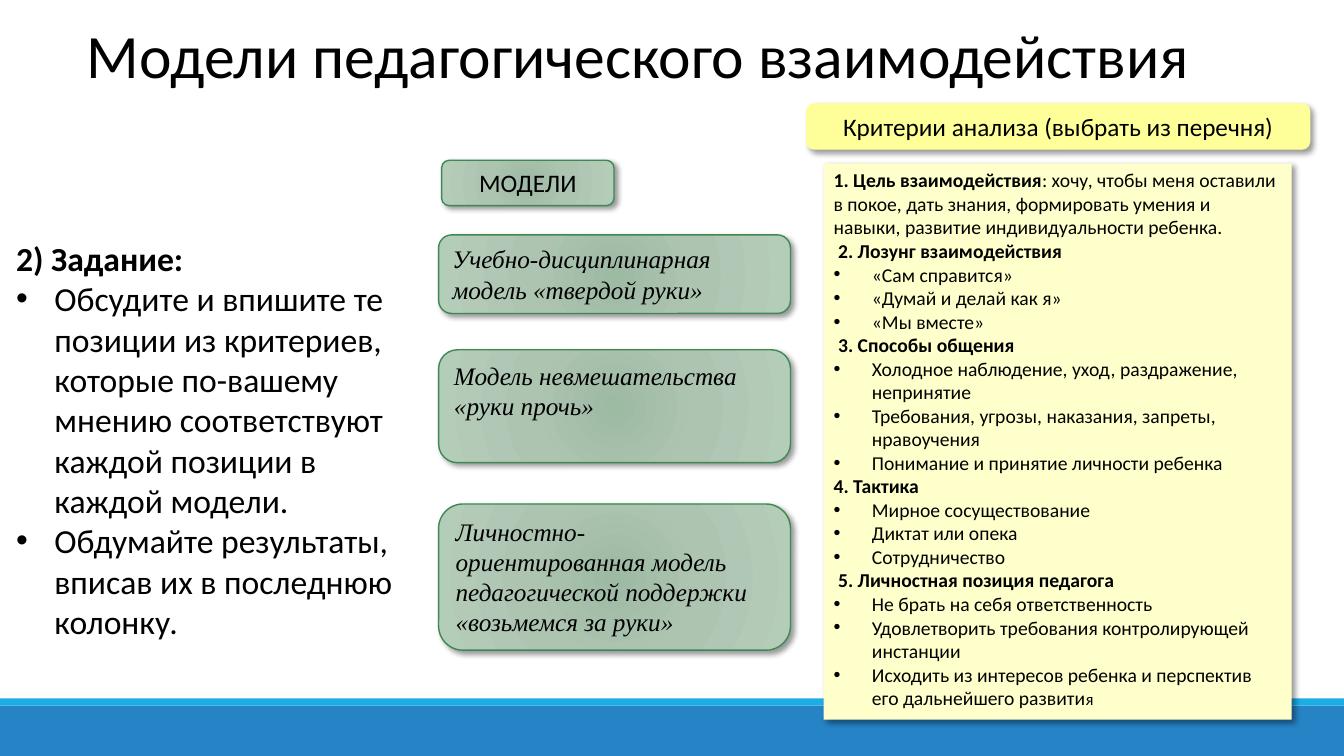
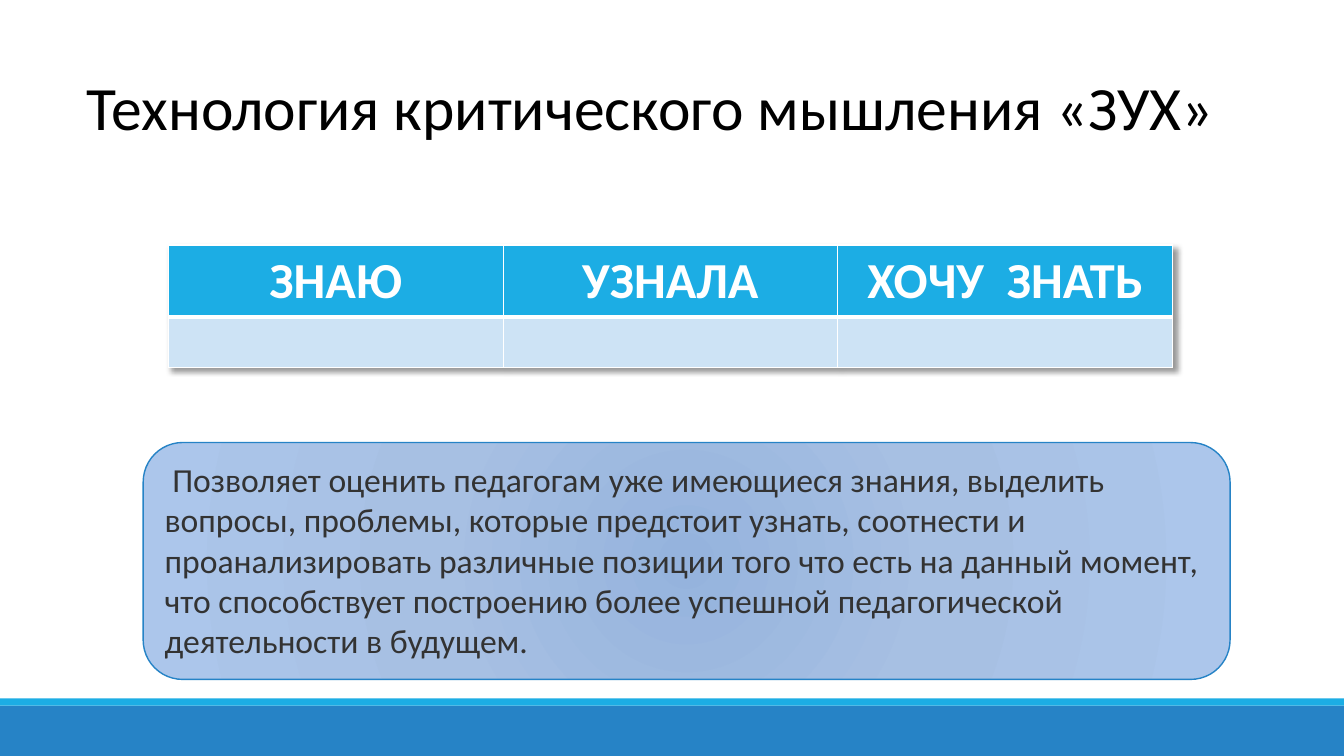
"""Builds two slides on models of teaching and a table for critical thinking."""
from lxml import etree
from pptx import Presentation
from pptx.dml.color import RGBColor
from pptx.enum.shapes import MSO_SHAPE
from pptx.enum.text import MSO_ANCHOR, MSO_AUTO_SIZE, PP_ALIGN
from pptx.oxml import parse_xml
from pptx.oxml.ns import nsdecls, qn
from pptx.util import Pt

RECT = MSO_SHAPE.RECTANGLE
ROUND = MSO_SHAPE.ROUNDED_RECTANGLE
LEFT = PP_ALIGN.LEFT
CENTER = PP_ALIGN.CENTER
TOP = MSO_ANCHOR.TOP
FIXED = MSO_AUTO_SIZE.NONE

BLACK = RGBColor(0x00, 0x00, 0x00)
WHITE = RGBColor(0xFF, 0xFF, 0xFF)
GRAY = RGBColor(0x33, 0x33, 0x33)
BLUE = RGBColor(0x26, 0x83, 0xC6)
CYAN = RGBColor(0x1C, 0xAD, 0xE4)
PALE = RGBColor(0xCD, 0xE3, 0xF5)
CREAM = RGBColor(0xFF, 0xFF, 0xCC)
YELLOW = RGBColor(0xFF, 0xFF, 0x99)
GREEN = RGBColor(0x3E, 0x88, 0x53)
MINT = (RGBColor(0x9D, 0xBA, 0xA3), RGBColor(0xAD, 0xC4, 0xB1), RGBColor(0xB4, 0xCD, 0xB9))
SKY = (RGBColor(0x95, 0xB3, 0xDD), RGBColor(0xA7, 0xC0, 0xE3), RGBColor(0xAC, 0xC6, 0xEB))

SANS = "Calibri"
SERIF = "Times New Roman"
PX = 9144
WIDE, HIGH = 1333, 750
INDENT = 38


def px(*sizes):
    """Turn px lengths into EMU."""
    return [size * PX for size in sizes]


def head(text, tail=""):
    """Give a plain line with a bold start."""
    return False, [(text, {"bold": True}), (tail, {})]


def dot(text, tail="", **form):
    """Give a bullet line whose tail may have its own format."""
    return True, [(text, {}), (tail, form)]


def put(frame, lines, size=18, font=SANS, ink=BLACK, bold=False,
        italic=False, align=LEFT, wrap=True):
    """Fill a text frame with one string or a list of head and dot lines."""
    if isinstance(lines, str):
        lines = [(False, [(lines, {})])]
    frame.word_wrap = wrap
    frame.auto_size = FIXED
    frame.vertical_anchor = TOP
    for rank, (point, runs) in enumerate(lines):
        para = frame.add_paragraph() if rank else frame.paragraphs[0]
        para.alignment = align
        para.space_before = Pt(0)
        prop = para._p.get_or_add_pPr()
        hang = INDENT * PX if point else 0
        prop.set("marL", str(hang))
        prop.set("indent", str(-hang))
        if point:
            etree.SubElement(prop, qn("a:buFont")).set("typeface", "Arial")
            etree.SubElement(prop, qn("a:buChar")).set("char", "•")
        else:
            etree.SubElement(prop, qn("a:buNone"))
        for text, form in runs:
            if text:
                run = para.add_run()
                run.text = text
                face = run.font
                face.name = font
                face.size = Pt(form.get("size", size))
                face.bold = form.get("bold", bold)
                face.italic = italic
                face.color.rgb = ink


def shade(host):
    """Add the soft drop shadow to an effect list."""
    host.append(parse_xml(
        f'<a:outerShdw {nsdecls("a")} blurRad="{Pt(4)}" dist="{Pt(3)}" dir="2700000" '
        'algn="tl" rotWithShape="0"><a:srgbClr val="000000">'
        '<a:alpha val="40000"/></a:srgbClr></a:outerShdw>'))


def glow(shape, tones):
    """Fill a shape with a round gradient of three tones."""
    stops = "".join(f'<a:gs pos="{spot}000"><a:srgbClr val="{tone}"/></a:gs>'
                    for spot, tone in zip((0, 45, 100), tones))
    shape.fill.background()
    props = shape.element.spPr
    props.replace(props.find(qn("a:noFill")), parse_xml(
        f'<a:gradFill {nsdecls("a")} rotWithShape="1"><a:gsLst>{stops}</a:gsLst>'
        '<a:path path="circle"><a:fillToRect l="100000" t="100000" r="100000" '
        'b="100000"/></a:path></a:gradFill>'))


def edge(cell, **sides):
    """Draw white cell borders with the given widths in points."""
    prop = cell._tc.get_or_add_tcPr()
    for rank, side in enumerate("LRTB"):
        prop.insert(rank, parse_xml(
            f'<a:ln{side} {nsdecls("a")} w="{Pt(sides.get(side, 1))}"><a:solidFill>'
            f'<a:srgbClr val="{WHITE}"/></a:solidFill></a:ln{side}>'))


class Deck:
    """Holds the shared style and the current slide."""

    def __init__(self):
        """Start an empty wide deck."""
        self.show = Presentation()
        self.show.slide_width, self.show.slide_height = px(WIDE, HIGH)

    def start(self, plan, title, box):
        """Add a slide with its bands and title."""
        self.slide = self.show.slides.add_slide(self.show.slide_layouts[plan])
        self.block((0, 700, WIDE, 50), BLUE)
        self.block((0, 693, WIDE, 7), CYAN)
        self.hold(0, box, title, size=44, wrap=False)

    def hold(self, index, box, lines, **form):
        """Move and fill a placeholder."""
        item = self.slide.placeholders[index]
        item.left, item.top, item.width, item.height = px(*box)
        put(item.text_frame, lines, **form)

    def block(self, box, fill, lines="", kind=RECT, line=None, width=1,
              shadow=False, **form):
        """Add a filled shape, with text if there is any."""
        shape = self.slide.shapes.add_shape(kind, *px(*box))
        if isinstance(fill, RGBColor):
            shape.fill.solid()
            shape.fill.fore_color.rgb = fill
        else:
            glow(shape, fill)
        if line is None:
            shape.line.fill.background()
        else:
            shape.line.color.rgb = line
            shape.line.width = Pt(width)
        shape.shadow.inherit = False
        if shadow:
            shade(shape.element.spPr.find(qn("a:effectLst")))
        if lines:
            put(shape.text_frame, lines, **form)

    def model(self, box, text, **form):
        """Add a green card."""
        self.block(box, MINT, text, kind=ROUND, line=GREEN, shadow=True, **form)

    def table(self, box, heads, highs):
        """Add a table with a head row and an empty row."""
        grid = self.slide.shapes.add_table(len(highs), len(heads), *px(*box)).table
        props = grid._tbl.tblPr
        props.insert(0, props.makeelement(qn("a:effectLst")))
        shade(props[0])
        for row, high in zip(grid.rows, highs):
            row.height = high * PX
        for spot, text in enumerate(heads):
            top, low = grid.cell(0, spot), grid.cell(1, spot)
            for cell, tone in ((top, CYAN), (low, PALE)):
                cell.fill.solid()
                cell.fill.fore_color.rgb = tone
            edge(top, B=3)
            edge(low, T=3)
            put(top.text_frame, text, size=36, ink=WHITE, bold=True, align=CENTER)


TASK = [
    head("2) Задание:"),
    dot("Обсудите и впишите те позиции из критериев, которые по-вашему мнению "
        "соответствуют каждой позиции в каждой модели."),
    dot("Обдумайте результаты, вписав их в последнюю колонку."),
]
TESTS = [
    head("1. Цель взаимодействия", ": хочу, чтобы меня оставили в покое, дать знания, "
         "формировать умения и навыки, развитие индивидуальности ребенка."),
    head(" 2. Лозунг взаимодействия"),
    dot("«Сам справится»"),
    dot("«Думай и делай как я»"),
    dot("«Мы вместе»"),
    head(" 3. Способы общения"),
    dot("Холодное наблюдение, уход, раздражение, непринятие"),
    dot("Требования, угрозы, наказания, запреты, нравоучения"),
    dot("Понимание и принятие личности ребенка"),
    head("4. Тактика"),
    dot("Мирное сосуществование"),
    dot("Диктат или опека"),
    dot("Сотрудничество"),
    head(" 5. Личностная позиция педагога"),
    dot("Не брать на себя ответственность"),
    dot("Удовлетворить требования контролирующей инстанции"),
    dot("Исходить из интересов ребенка и перспектив его дальнейшего развити", "я", size=12),
]
MODELS = [
    (233, 78, "Учебно-дисциплинарная модель «твердой руки»"),
    (347, 112, "Модель невмешательства «руки прочь»"),
    (500, 145, "Личностно-ориентированная модель педагогической поддержки "
     "«возьмемся за руки»"),
]


def main():
    """Build and save both slides."""
    deck = Deck()

    deck.start(1, "Модели педагогического взаимодействия", (76, 12, 1139, 84))
    deck.hold(1, (6, 231, 395, 414), TASK, size=24)
    deck.block((817, 162, 464, 552), CREAM, TESTS, shadow=True, size=14)
    deck.block((800, 103, 499, 45), YELLOW, "Критерии анализа (выбрать из перечня)",
               kind=ROUND, line=YELLOW, width=0.75, shadow=True, align=CENTER)
    deck.model((438, 159, 171, 45), "МОДЕЛИ", align=CENTER)
    for top, high, text in MODELS:
        deck.model((435, top, 349, high), text, font=SERIF, italic=True)

    deck.start(5, "Технология критического мышления «ЗУХ»", (76, 63, 1149, 84))
    deck.block((142, 439, 1078, 235), SKY,
               " Позволяет оценить педагогам уже имеющиеся знания, выделить вопросы, "
               "проблемы, которые предстоит узнать, соотнести и проанализировать "
               "различные позиции того что есть на данный момент, что способствует "
               "построению более успешной педагогической деятельности в будущем.",
               kind=ROUND, line=BLUE, size=24, ink=GRAY)
    deck.table((167, 243, 996, 120), ("ЗНАЮ", "УЗНАЛА", "ХОЧУ  ЗНАТЬ"), (70, 50))

    deck.show.save("out.pptx")


if __name__ == "__main__":
    main()
